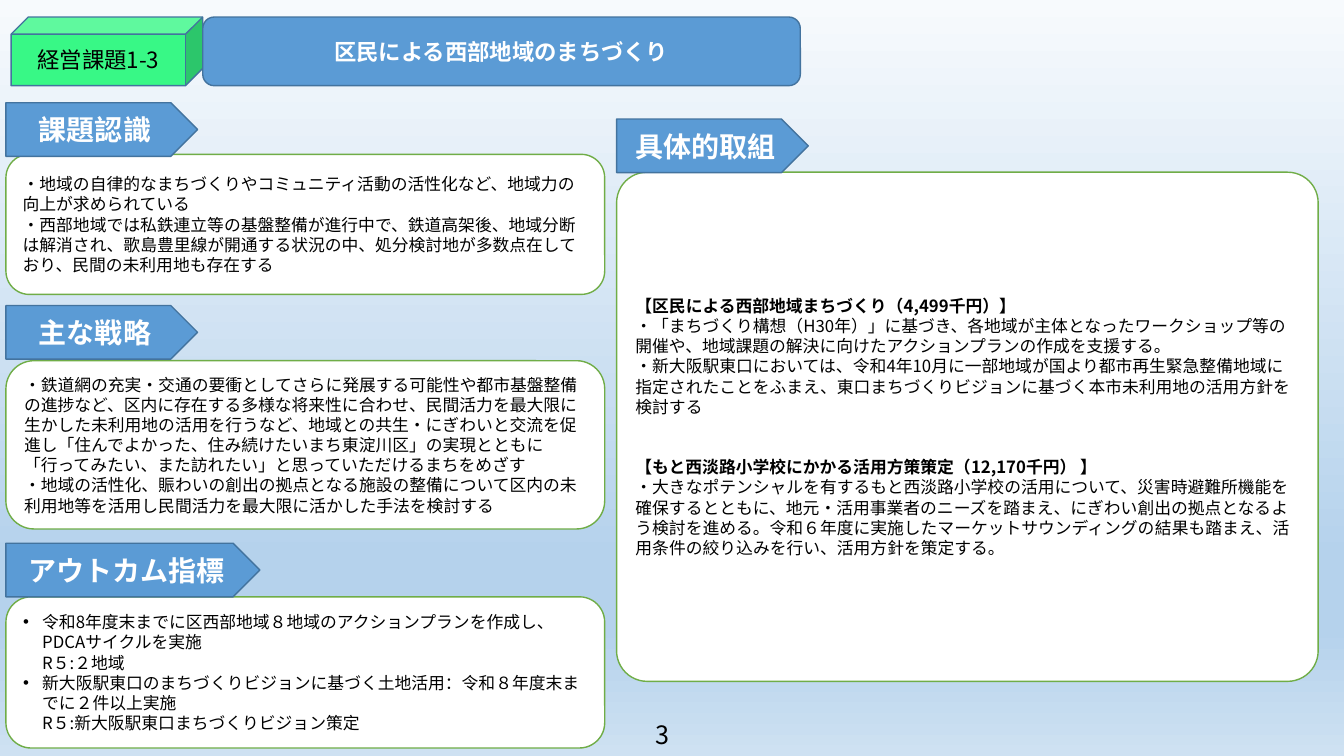
from dataclasses import dataclass

from lxml import etree
from pptx import Presentation
from pptx import util as u
from pptx.dml.color import RGBColor
from pptx.enum import shapes, text
from pptx.oxml import ns


@dataclass(frozen=True)
class Theme:
    font: str = "Noto Sans CJK JP"
    ink: str = "000000"
    paper: str = "FFFFFF"
    blue: str = "5B9BD5"
    blue_edge: str = "43739E"
    green: str = "38F886"
    green_edge: str = "70AD47"
    backdrop: tuple = ((0, "F7FAFD"), (74, "B5D2EC"), (83, "B5D2EC"), (100, "CEE1F2"))
    body: int = 12
    title: int = 16
    page: int = 18
    heading: int = 20
    leading: float = 14.4


class Board:
    def __init__(self, slide, theme):
        self.slide = slide
        self.theme = theme

    def backdrop(self):
        fill = self.slide.background.fill
        fill.gradient()
        fill.gradient_angle = 270
        stops = self.slide.element.find(".//" + ns.qn("a:gsLst"))
        for stop in list(stops):
            stops.remove(stop)
        for percent, colour in self.theme.backdrop:
            stop = etree.SubElement(stops, ns.qn("a:gs"), pos=str(percent * 1000))
            etree.SubElement(stop, ns.qn("a:srgbClr"), val=colour)

    def wording(self, paragraph, words, size, colour, bold=False, **layout):
        for name, value in layout.items():
            setattr(paragraph, name, value)
        run = paragraph.add_run()
        run.text = words
        for name, value in {"size": u.Pt(size), "bold": bold, "name": self.theme.font}.items():
            setattr(run.font, name, value)
        run.font.color.rgb = RGBColor.from_string(colour)
        etree.SubElement(run.font._element, ns.qn("a:ea"), typeface=self.theme.font)

    def block(self, kind, place, fill, edge):
        block = self.slide.shapes.add_shape(kind, *map(u.Cm, place))
        block.shadow.inherit = False
        block.fill.solid()
        block.fill.fore_color.rgb = RGBColor.from_string(fill)
        block.line.color.rgb = RGBColor.from_string(edge)
        block.line.width = u.Pt(1)
        block.text_frame.word_wrap = True
        block.text_frame.vertical_anchor = text.MSO_ANCHOR.MIDDLE
        return block

    def label(self, kind, place, words, size, fill, colour, bold=True):
        label = self.block(kind, place, fill, self.theme.blue_edge)
        self.wording(label.text_frame.paragraphs[0], words, size, colour, bold,
                     alignment=text.PP_ALIGN.CENTER)

    def panel(self, place, lines, corner=0.16667):
        panel = self.block(shapes.MSO_SHAPE.ROUNDED_RECTANGLE, place,
                           self.theme.paper, self.theme.green_edge)
        panel.adjustments[0] = corner
        frame = panel.text_frame
        for index, (role, words) in enumerate(lines):
            paragraph = frame.add_paragraph() if index else frame.paragraphs[0]
            gap = 2 * self.theme.leading if role == "head" and index else 0
            self.wording(paragraph, words, self.theme.body, self.theme.ink, role == "head",
                         alignment=text.PP_ALIGN.LEFT,
                         line_spacing=u.Pt(self.theme.leading), space_before=u.Pt(gap))
            self.indent(paragraph, role)

    def indent(self, paragraph, role):
        margins = {"bullet": (0.48, -0.48), "result": (0.48, 0)}
        if role not in margins:
            return
        properties = paragraph._p.get_or_add_pPr()
        for name, length in zip(("marL", "indent"), margins[role]):
            properties.set(name, str(int(u.Cm(length))))
        if role == "bullet":
            etree.SubElement(properties, ns.qn("a:buFont"), typeface="Arial")
            etree.SubElement(properties, ns.qn("a:buChar"), char="•")

    def section(self, heading, left, top, arrow_width, panel_top, panel_size, lines, corner=0.16667):
        self.panel((left, panel_top, *panel_size), lines, corner)
        self.label(shapes.MSO_SHAPE.PENTAGON, (left, top, arrow_width, 1.35), heading,
                   self.theme.heading, self.theme.blue, self.theme.paper)

    def page_number(self, number, place):
        box = self.slide.shapes.add_textbox(*map(u.Cm, place))
        box.text_frame.word_wrap = True
        self.wording(box.text_frame.paragraphs[0], number, self.theme.page, self.theme.ink)


ISSUES = [
    ("plain", "・地域の自律的なまちづくりやコミュニティ活動の活性化など、地域力の向上が求められている"),
    ("plain", "・西部地域では私鉄連立等の基盤整備が進行中で、鉄道高架後、地域分断は解消され、"
              "歌島豊里線が開通する状況の中、処分検討地が多数点在しており、民間の未利用地も存在する"),
]
STRATEGIES = [
    ("plain", "・鉄道網の充実・交通の要衝としてさらに発展する可能性や都市基盤整備の進捗など、"
              "区内に存在する多様な将来性に合わせ、民間活力を最大限に生かした未利用地の活用を行うなど、"
              "地域との共生・にぎわいと交流を促進し「住んでよかった、住み続けたいまち東淀川区」の実現とともに"
              "「行ってみたい、また訪れたい」と思っていただけるまちをめざす"),
    ("plain", "・地域の活性化、賑わいの創出の拠点となる施設の整備について"
              "区内の未利用地等を活用し民間活力を最大限に活かした手法を検討する"),
]
OUTCOMES = [
    ("bullet", "令和8年度末までに区西部地域８地域のアクションプランを作成し、PDCAサイクルを実施"),
    ("result", "R５:２地域"),
    ("bullet", "新大阪駅東口のまちづくりビジョンに基づく土地活用：令和８年度末までに２件以上実施"),
    ("result", "R５:新大阪駅東口まちづくりビジョン策定"),
]
ACTIONS = [
    ("head", "【区民による西部地域まちづくり（4,499千円）】"),
    ("plain", "・「まちづくり構想（H30年）」に基づき、各地域が主体となったワークショップ等の開催や、"
              "地域課題の解決に向けたアクションプランの作成を支援する。"),
    ("plain", "・新大阪駅東口においては、令和4年10月に一部地域が国より都市再生緊急整備地域に"
              "指定されたことをふまえ、東口まちづくりビジョンに基づく本市未利用地の活用方針を検討する"),
    ("head", "【もと西淡路小学校にかかる活用方策策定（12,170千円） 】"),
    ("plain", "・大きなポテンシャルを有するもと西淡路小学校の活用について、災害時避難所機能を確保するとともに、"
              "地元・活用事業者のニーズを踏まえ、にぎわい創出の拠点となるよう検討を進める。"
              "令和６年度に実施したマーケットサウンディングの結果も踏まえ、"
              "活用条件の絞り込みを行い、活用方針を策定する。"),
]


def main():
    deck = Presentation()
    deck.slide_width, deck.slide_height = u.Cm(33.87), u.Cm(19.05)
    theme = Theme()
    board = Board(deck.slides.add_slide(deck.slide_layouts[6]), theme)
    board.backdrop()
    left, right, column = 0.15, 15.54, 15.09
    board.section("課題認識", left, 2.59, 4.83, 3.89, (column, 3.53), ISSUES)
    board.section("主な戦略", left, 7.7, 4.83, 9.09, (column, 4.24), STRATEGIES)
    board.section("アウトカム指標", left, 13.69, 6.4, 15.04, (column, 3.81), OUTCOMES)
    board.section("具体的取組", right, 3, 4.83, 4.34, (17.68, 12.83), ACTIONS, 0.06)
    board.label(shapes.MSO_SHAPE.CUBE, (0.28, 0.43, 4.83, 1.73), "経営課題1-3",
                theme.title, theme.green, theme.ink, bold=False)
    board.label(shapes.MSO_SHAPE.ROUNDED_RECTANGLE, (5.11, 0.43, 15.06, 1.73),
                "区民による西部地域のまちづくり", theme.title, theme.blue, theme.paper)
    board.page_number("3", (16.28, 18.01, 1.3, 1.02))
    deck.save("out.pptx")


if __name__ == "__main__":
    main()
